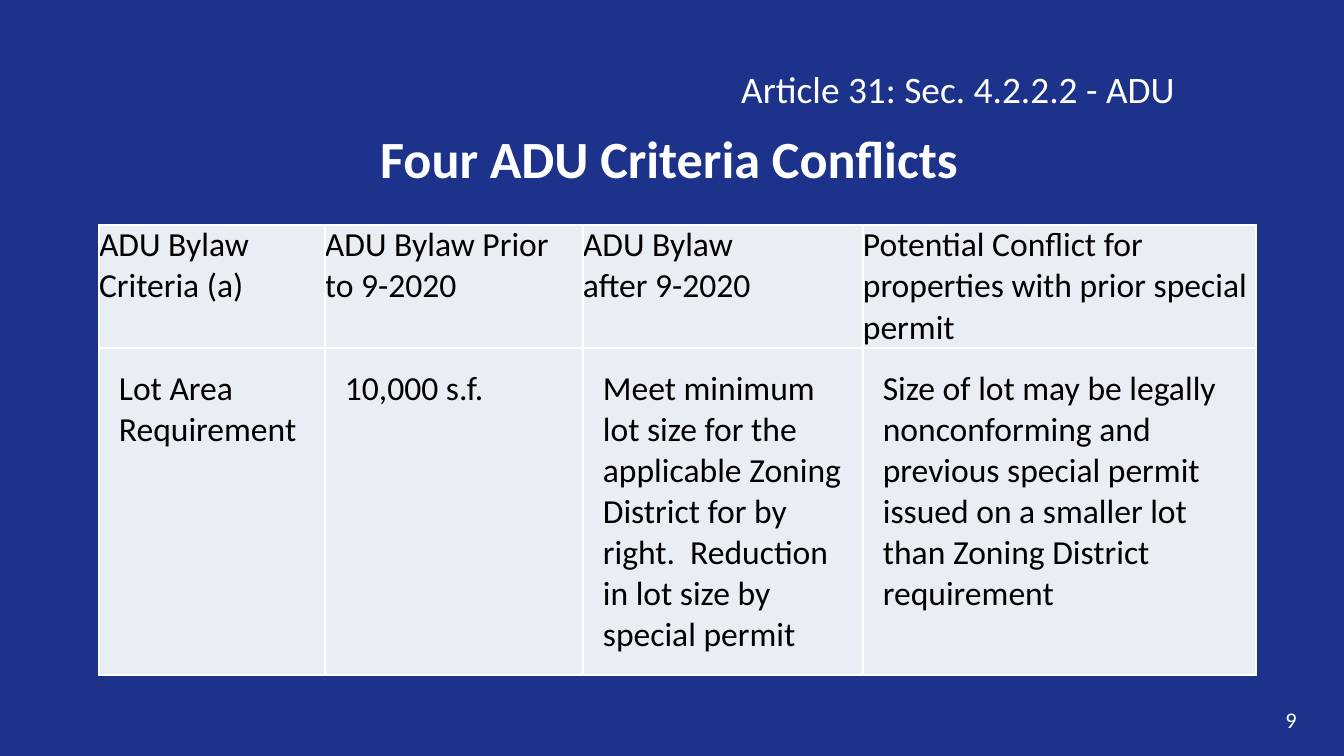
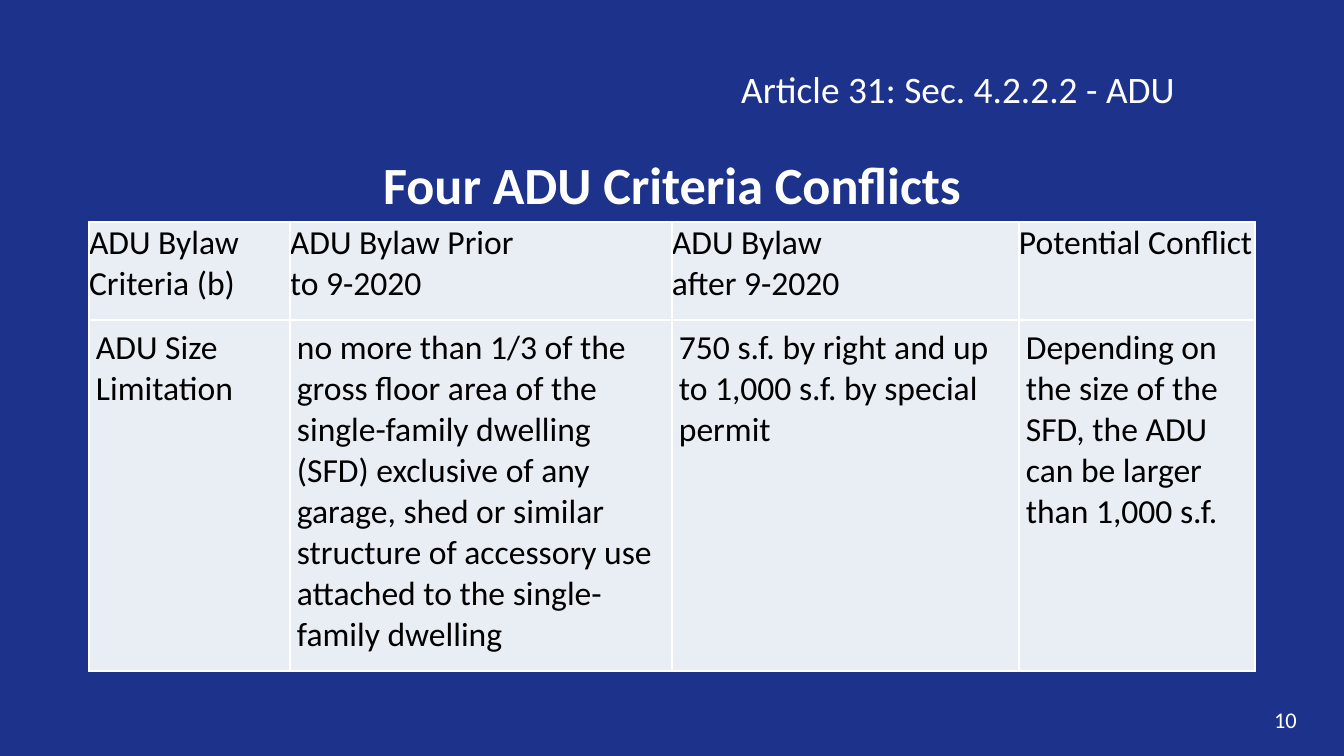
from dataclasses import dataclass

from lxml import etree
from pptx import Presentation
from pptx.dml.color import RGBColor
from pptx.enum.text import MSO_ANCHOR, MSO_AUTO_SIZE, PP_ALIGN
from pptx.oxml.ns import qn
from pptx.util import Pt

LEFT, CENTER, RIGHT = PP_ALIGN.LEFT, PP_ALIGN.CENTER, PP_ALIGN.RIGHT
TOP, MIDDLE = MSO_ANCHOR.TOP, MSO_ANCHOR.MIDDLE
NO_FIT, GROW = MSO_AUTO_SIZE.NONE, MSO_AUTO_SIZE.SHAPE_TO_FIT_TEXT
TITLE_ONLY_LAYOUT = 5

EMU_PER_PX = 914400 / 134.4
SLIDE_SIZE = (1344, 756)


@dataclass(frozen=True)
class Theme:
    font: str = "Calibri"
    background: str = "1D328B"
    light: str = "FFFFFF"
    dark: str = "000000"
    cell: str = "E9EDF4"
    title_size: int = 28
    article_size: int = 20
    table_size: int = 18
    number_size: int = 12
    border_width: int = 1


THEME = Theme()

TITLE = "Four ADU Criteria Conflicts"
ARTICLE = "Article 31: Sec. 4.2.2.2 - ADU"
ARTICLE_BOX = (728, 60, 548, 59)
TITLE_SIZE = (1210, 126)
NUMBER_BOX = (1256, 700, 54, 40)

# Each line of a cell's text is a paragraph.
SLIDES = [
    {
        "number": 9,
        "title_at": (64, 95),
        "table_at": (99, 225),
        "columns": (226, 258, 280, 393),
        "rows": (101, 290),
        "body_inset": 20,
        "cells": [
            ("ADU Bylaw Criteria (a)",
             "ADU Bylaw Prior\nto 9-2020",
             "ADU Bylaw\nafter 9-2020",
             "Potential Conflict for properties with prior special permit"),
            ("Lot Area Requirement",
             "10,000 s.f.",
             "Meet minimum lot size for the applicable Zoning District for by "
             "right.  Reduction in lot size by special permit",
             "Size of lot may be legally nonconforming and previous special "
             "permit issued on a smaller lot than Zoning District requirement"),
        ],
    },
    {
        "number": 10,
        "title_at": (67, 121),
        "table_at": (89, 222),
        "columns": (201, 382, 347, 236),
        "rows": (98, 351),
        "body_inset": 7,
        "cells": [
            ("ADU Bylaw Criteria (b)",
             "ADU Bylaw Prior\nto 9-2020",
             "ADU Bylaw\nafter 9-2020",
             "Potential Conflict"),
            ("ADU Size Limitation",
             "no more than 1/3 of the gross floor area of the single-family "
             "dwelling (SFD) exclusive of any garage, shed or similar structure "
             "of accessory use attached to the single- family dwelling",
             "750 s.f. by right and up to 1,000 s.f. by special permit",
             "Depending on the size of the SFD, the ADU can be larger than "
             "1,000 s.f."),
        ],
    },
]


def px(length):
    return round(length * EMU_PER_PX)


def rgb(color):
    return RGBColor.from_string(color)


def write_text(frame, text, *, size, color=THEME.light, bold=False, align=LEFT):
    """Fill a text frame, one paragraph per line of text."""
    frame.text = text
    for paragraph in frame.paragraphs:
        paragraph.alignment = align
        for run in paragraph.runs:
            run.font.name = THEME.font
            run.font.size = Pt(size)
            run.font.bold = bold
            run.font.color.rgb = rgb(color)


def set_frame(frame, anchor, auto_size):
    frame.word_wrap = True
    frame.vertical_anchor = anchor
    frame.auto_size = auto_size


def add_text(slide, box, text, *, anchor=TOP, auto_size=NO_FIT, **text_format):
    frame = slide.shapes.add_textbox(*map(px, box)).text_frame
    write_text(frame, text, **text_format)
    set_frame(frame, anchor, auto_size)


def set_title(slide, position):
    title = slide.shapes.title
    title.left, title.top = map(px, position)
    title.width, title.height = map(px, TITLE_SIZE)
    write_text(title.text_frame, TITLE, size=THEME.title_size, bold=True, align=CENTER)
    set_frame(title.text_frame, MIDDLE, NO_FIT)


def add_borders(cell):
    properties = cell._tc.get_or_add_tcPr()
    for side in ("a:lnL", "a:lnR", "a:lnT", "a:lnB"):
        line = etree.SubElement(properties, qn(side), w=str(Pt(THEME.border_width)))
        fill = etree.SubElement(line, qn("a:solidFill"))
        etree.SubElement(fill, qn("a:srgbClr"), val=THEME.light)


def format_cell(cell, text, inset):
    cell.margin_left = cell.margin_right = px(inset)
    cell.margin_top = cell.margin_bottom = px(inset)
    add_borders(cell)
    cell.fill.solid()
    cell.fill.fore_color.rgb = rgb(THEME.cell)
    write_text(cell.text_frame, text, size=THEME.table_size, color=THEME.dark)


def add_criteria_table(slide, content):
    columns, rows = content["columns"], content["rows"]
    box = (*content["table_at"], sum(columns), sum(rows))
    table = slide.shapes.add_table(len(rows), len(columns), *map(px, box)).table
    table.first_row = table.horz_banding = False
    for column, width in zip(table.columns, columns):
        column.width = px(width)
    for row, height in zip(table.rows, rows):
        row.height = px(height)
    insets = (0, content["body_inset"])
    for row, texts, inset in zip(table.rows, content["cells"], insets):
        for cell, text in zip(row.cells, texts):
            format_cell(cell, text, inset)


def add_criteria_slide(presentation, content):
    layout = presentation.slide_layouts[TITLE_ONLY_LAYOUT]
    slide = presentation.slides.add_slide(layout)
    set_title(slide, content["title_at"])
    add_text(slide, NUMBER_BOX, str(content["number"]), anchor=MIDDLE,
             size=THEME.number_size, align=RIGHT)
    add_criteria_table(slide, content)
    add_text(slide, ARTICLE_BOX, ARTICLE, auto_size=GROW, size=THEME.article_size)


def main():
    presentation = Presentation()
    presentation.slide_width, presentation.slide_height = map(px, SLIDE_SIZE)
    background = presentation.slide_master.background.fill
    background.solid()
    background.fore_color.rgb = rgb(THEME.background)
    for content in SLIDES:
        add_criteria_slide(presentation, content)
    presentation.save("out.pptx")


if __name__ == "__main__":
    main()
